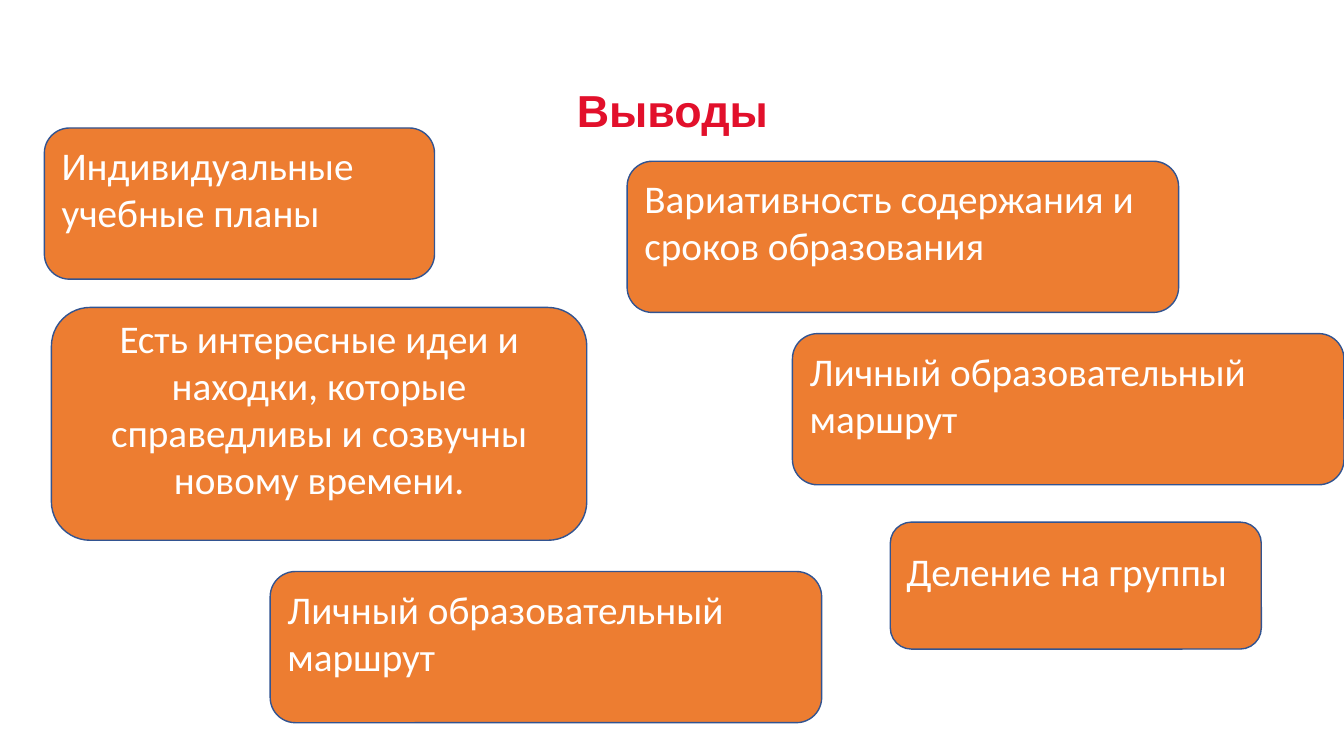
"""Build the conclusions slide with six rounded callouts."""
import pptx
import pptx.util
import pptx.dml.color
import pptx.enum.shapes
import pptx.enum.text

Inches = pptx.util.Inches
ALIGN = pptx.enum.text.PP_ALIGN
COLORS = {"title": "E2102B", "fill": "ED7D31", "line": "325491", "text": "FFFFFF"}


def write(tf, text, size, font, color, bold=False, align=ALIGN.LEFT, spacing=1.0):
    tf.word_wrap = True
    tf.vertical_anchor = pptx.enum.text.MSO_ANCHOR.MIDDLE
    p = tf.paragraphs[0]
    p.alignment = align
    p.line_spacing = spacing
    r = p.add_run()
    r.text = text
    r.font.size = pptx.util.Pt(size)
    r.font.name = font
    r.font.bold = bold
    r.font.color.rgb = pptx.dml.color.RGBColor.from_string(COLORS[color])


prs = pptx.Presentation()
prs.slide_width = Inches(13.33)
prs.slide_height = Inches(7.5)
s = prs.slides.add_slide(prs.slide_layouts[5])

title = s.shapes.title
title.left, title.top = Inches(0.92), Inches(0.4)
title.width, title.height = Inches(11.5), Inches(1.45)
write(title.text_frame, "Выводы", size=32, font="Arial", color="title",
      bold=True, align=ALIGN.CENTER, spacing=0.9)

conclusions = [
    ("Есть интересные идеи и находки, которые справедливы и созвучны новому времени.",
     0.51, 3.05, 5.31, 2.31, ALIGN.CENTER),
    ("Вариативность содержания и сроков образования", 6.22, 1.6, 5.47, 1.5, ALIGN.LEFT),
    ("Личный образовательный маршрут", 7.86, 3.31, 5.47, 1.5, ALIGN.LEFT),
    ("Индивидуальные учебные планы", 0.44, 1.27, 3.87, 1.5, ALIGN.LEFT),
    ("Личный образовательный маршрут", 2.68, 5.67, 5.47, 1.5, ALIGN.LEFT),
    ("Деление на группы", 8.83, 5.18, 3.68, 1.26, ALIGN.LEFT),
]
for text, left, top, width, height, align in conclusions:
    sp = s.shapes.add_shape(pptx.enum.shapes.MSO_SHAPE.ROUNDED_RECTANGLE,
                            Inches(left), Inches(top), Inches(width), Inches(height))
    sp.shadow.inherit = False
    sp.fill.solid()
    sp.fill.fore_color.rgb = pptx.dml.color.RGBColor.from_string(COLORS["fill"])
    sp.line.color.rgb = pptx.dml.color.RGBColor.from_string(COLORS["line"])
    sp.line.width = pptx.util.Pt(1)
    sp.text_frame.margin_bottom = Inches(0.35)
    write(sp.text_frame, text, size=28, font="Calibri", color="text", align=align)

prs.save("out.pptx")
